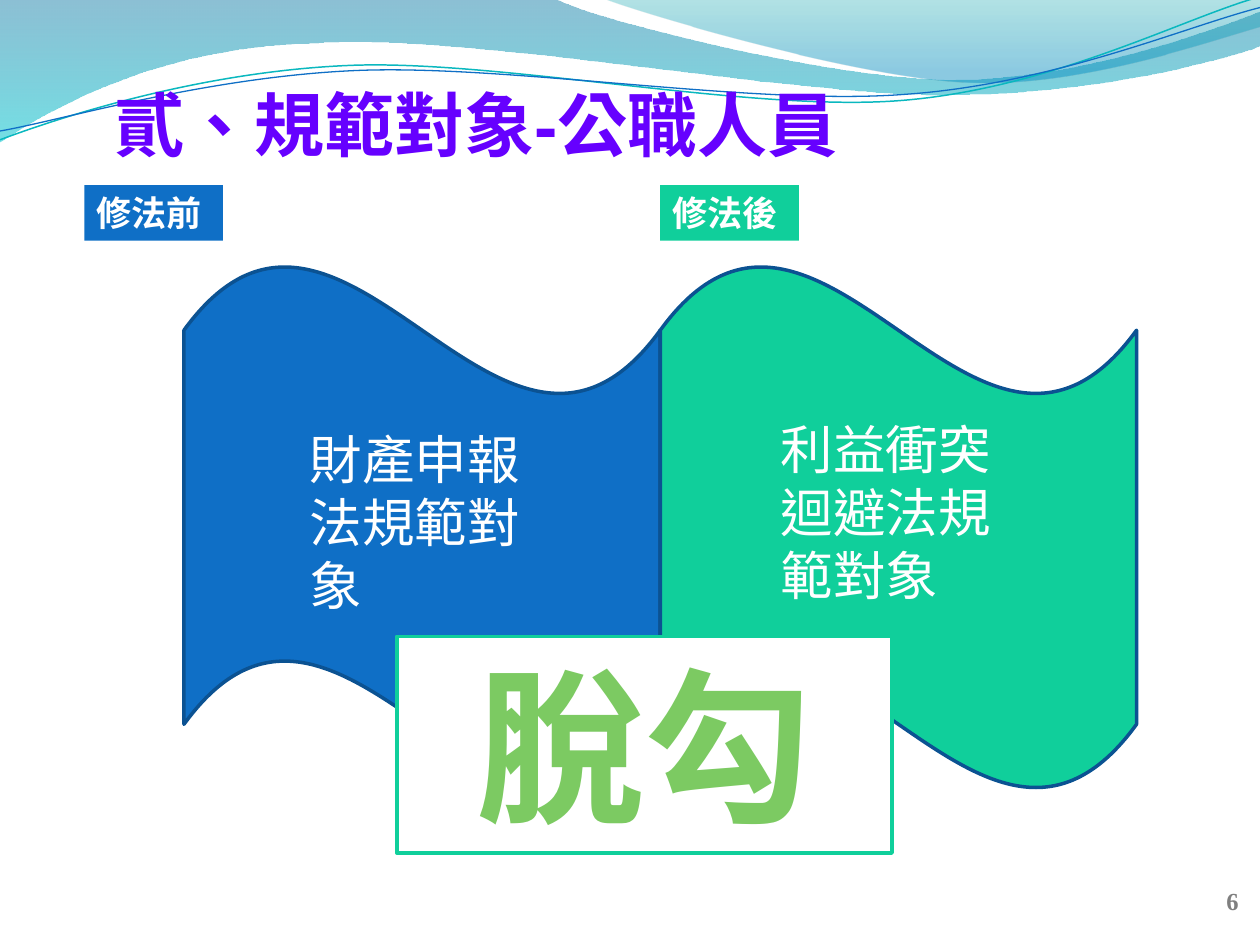
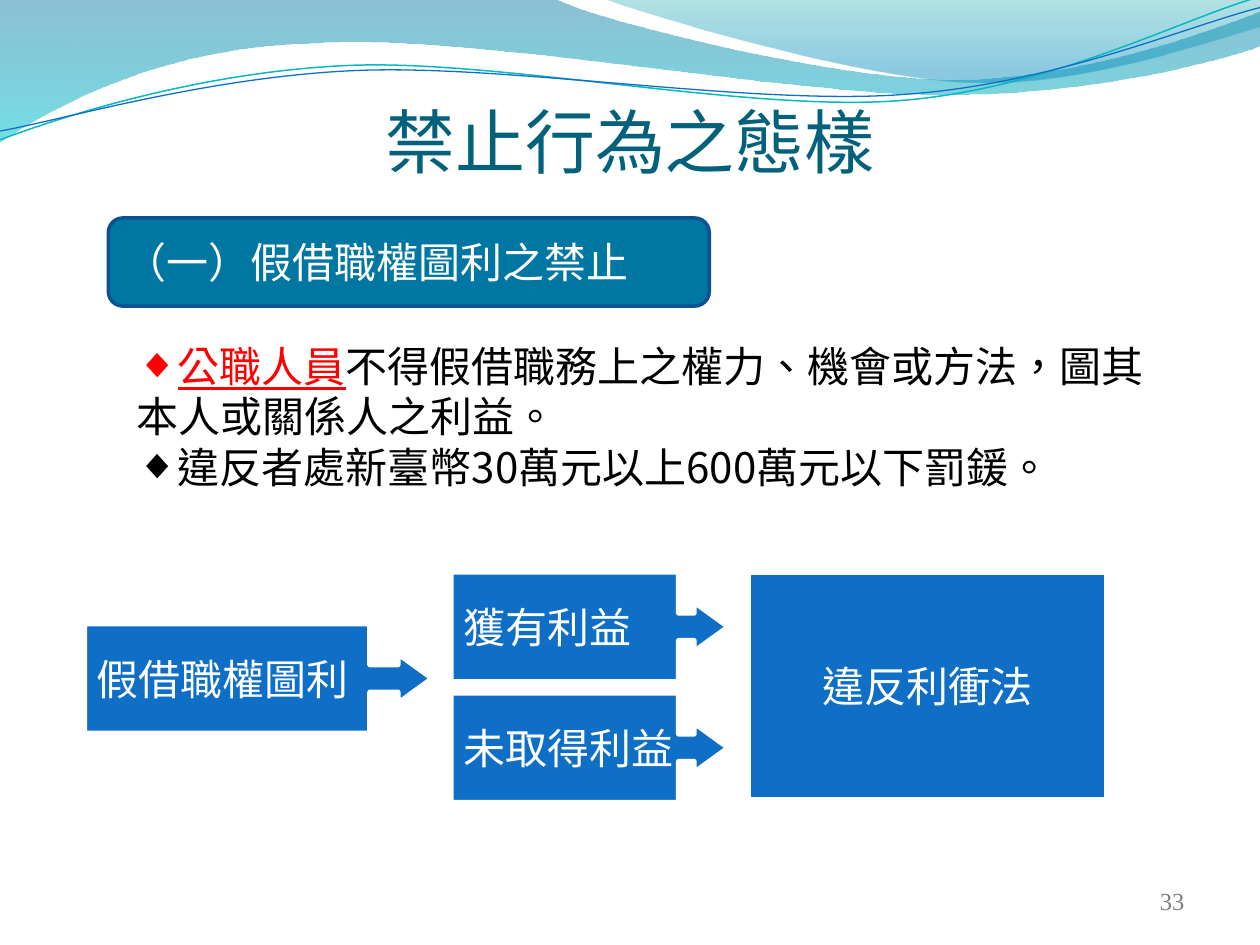
import pptx
import pptx.dml.color
import pptx.enum.shapes
import pptx.enum.text
import pptx.oxml
import pptx.oxml.ns
import pptx.util
from lxml import etree

Inches = pptx.util.Inches
Pt = pptx.util.Pt
SHAPE = pptx.enum.shapes.MSO_SHAPE
ALIGN = pptx.enum.text.PP_ALIGN
ANCHOR = pptx.enum.text.MSO_ANCHOR
qn = pptx.oxml.ns.qn

BLUE, GREEN, EDGE, WHITE, GREY = "0F6FC6", "10CF9B", "0B5292", "FFFFFF", "7F7F7F"
CJK = "Noto Sans CJK SC"

BANDS = [
    {"start": (0, 0), "close": True, "stops": [(0, "0074A1", 45), (1, "00C6CF", 55)],
     "steps": [(4.4, -0.01), (4.76, 0.17, 6.64, 0.63, 7.58, 0.63),
               (8.53, 0.63, 9.58, 0.26, 10, 0.09), (10.01, 0.36),
               (9.83, 0.44, 8.7, 0.76, 7.46, 0.75), (6.22, 0.75, 3.82, 0.28, 2.57, 0.34),
               (1.29, 0.36, 0.46, 0.83, -0.01, 1.13)]},
    {"start": (4.79, -0.01), "close": True, "stops": [(0, "00A1A9", 30), (0.8, "008BBF", 45)],
     "steps": [(5.09, 0.11, 6.82, 0.62, 7.69, 0.65), (8.56, 0.69, 9.61, 0.32, 10, 0.21),
               (10, 0)]},
    {"start": (0, 1.11), "close": False, "line": ("0AB8BF", 0.85),
     "steps": [(0.48, 0.93, 1.58, 0.57, 2.77, 0.52), (3.95, 0.47, 5.93, 0.89, 7.13, 0.8),
               (8.33, 0.71, 9.38, 0.15, 9.98, -0.02)]},
    {"start": (0, 1.04), "close": False, "line": (BLUE, 0.75),
     "steps": [(0.47, 0.96, 1.64, 0.61, 2.83, 0.56), (4.03, 0.51, 5.97, 0.84, 7.17, 0.75),
               (8.36, 0.67, 9.41, 0.21, 10, 0.06)]},
]

PERIODS = [
    {"label": "修法前", "law": "財產申報法規範對象", "color": BLUE,
     "label_left": 0.67, "wave_left": 1.46, "law_at": (2.36, 3.34, 2.24, 1.6)},
    {"label": "修法後", "law": "利益衝突迴避法規範對象", "color": GREEN,
     "label_left": 5.24, "wave_left": 5.24, "law_at": (6.1, 3.26, 2.13, 1.6)},
]

RULES = [
    [("公職人員", "FF0000", True),
     ("不得假借職務上之權力、機會或方法，圖其本人或關係人之利益。", "000000", False)],
    [("違反者處新臺幣30萬元以上600萬元以下罰鍰。", "000000", False)],
]

CALLOUTS = [
    ("假借職權圖利", (0.67, 4.95, 2.76, 0.87)),
    ("獲有利益", (3.58, 4.54, 2.2, 0.87)),
    ("未取得利益", (3.58, 5.5, 2.2, 0.87)),
]


def rgb(color):
    return pptx.dml.color.RGBColor.from_string(color)


def place(sp, at):
    sp.left, sp.top, sp.width, sp.height = map(Inches, at)


def set_line(sp, line):
    if line:
        sp.line.color.rgb = rgb(line[0])
        sp.line.width = Pt(line[1])
    else:
        sp.line.fill.background()


def style_run(r, size, font, color, bold=False, underline=False):
    r.font.size, r.font.name = Pt(size), font
    r.font.bold, r.font.underline = bold, underline
    r.font.color.rgb = rgb(color)
    rpr = r.font._element
    rpr.set("lang", "zh-TW")
    ea = etree.Element(qn("a:ea"), typeface=font)
    rpr.find(qn("a:latin")).addnext(ea)


def write(sp, text, size, font, color, bold=False, align=ALIGN.LEFT,
          anchor=ANCHOR.TOP, wrap=True):
    tf = sp.text_frame
    tf.text = text
    tf.word_wrap, tf.vertical_anchor = wrap, anchor
    tf.auto_size = pptx.enum.text.MSO_AUTO_SIZE.NONE
    p = tf.paragraphs[0]
    p.alignment = align
    style_run(p.runs[0], size, font, color, bold)
    return p.runs[0]


def add_box(s, kind, at, fill, line=None):
    sp = s.shapes.add_shape(kind, *map(Inches, at))
    sp.shadow.inherit = False
    sp.fill.solid()
    sp.fill.fore_color.rgb = rgb(fill)
    set_line(sp, line)
    return sp


def add_text(s, at, *args, **style):
    return write(s.shapes.add_textbox(*map(Inches, at)), *args, **style)


def add_title(s, text, at, color, **style):
    place(s.shapes.title, at)
    write(s.shapes.title, text, 40, "Arial", color, **style)


def add_page_number(s, number, left, bold):
    add_text(s, (left, 6.95, 2.33, 0.4), number, 14, "Times New Roman", GREY,
             bold=bold, align=ALIGN.RIGHT, anchor=ANCHOR.MIDDLE)


def add_curve(s, start, steps, close):
    points = [(Inches(x), Inches(y)) for step in steps for x, y in zip(step[::2], step[1::2])]
    builder = s.shapes.build_freeform(*map(Inches, start))
    builder.add_line_segments(points, close=close)
    sp = builder.convert_to_shape()
    segments = iter(list(sp.element.spPr.iter(qn("a:lnTo"))))
    for step in steps:
        segment = next(segments)
        if len(step) == 6:
            curve = etree.Element(qn("a:cubicBezTo"))
            segment.addprevious(curve)
            for part in (segment, next(segments), next(segments)):
                curve.append(part[0])
                part.getparent().remove(part)
    return sp


def add_master_bands(prs, s):
    tree = prs.slide_master.shapes.element
    for i, band in enumerate(BANDS):
        sp = add_curve(s, band["start"], band["steps"], band["close"])
        sp.shadow.inherit = False
        set_line(sp, band.get("line"))
        if "stops" in band:
            sp.fill.gradient()
            sp.fill.gradient_angle = 270
            for stop, (position, color, _) in zip(sp.fill.gradient_stops, band["stops"]):
                stop.position = position
                stop.color.rgb = rgb(color)
            for clr, (_, _, opacity) in zip(sp.element.spPr.iter(qn("a:srgbClr")), band["stops"]):
                etree.SubElement(clr, qn("a:alpha"), val=str(opacity * 1000))
        else:
            sp.fill.background()
        sp.element.nvSpPr.cNvPr.set("id", str(50 + i))
        tree.insert(2 + i, sp.element)


def add_rules(sp):
    place(sp, (0.98, 2.65, 8.27, 1.31))
    tf = sp.text_frame
    tf.word_wrap, tf.vertical_anchor = True, ANCHOR.TOP
    tf.auto_size = pptx.enum.text.MSO_AUTO_SIZE.NONE
    for i, rule in enumerate(RULES):
        p = tf.add_paragraph() if i else tf.paragraphs[0]
        p.alignment, p.space_before = ALIGN.LEFT, Pt(0)
        ppr = p._p.get_or_add_pPr()
        ppr.set("marL", "0")
        ppr.set("indent", "0")
        etree.SubElement(ppr, qn("a:buFont"), typeface="Arial")
        etree.SubElement(ppr, qn("a:buChar"), char="◆")
        for text, color, underline in rule:
            r = p.add_run()
            r.text = text
            style_run(r, 24, CJK, color, underline=underline)


def build_scope_slide(s):
    add_title(s, "貳、規範對象-公職人員", (0.81, 0.6, 7.17, 0.77), "6600FF", bold=True)
    for period in PERIODS:
        add_box(s, SHAPE.WAVE, (period["wave_left"], 2.1, 3.78, 4.17),
                period["color"], (EDGE, 2))
        add_text(s, period["law_at"], period["law"], 30, CJK, WHITE)
        label = add_box(s, SHAPE.RECTANGLE, (period["label_left"], 1.47, 1.1, 0.44),
                        period["color"])
        write(label, period["label"], 20, "Vollkorn", WHITE, bold=True)
    verdict = add_box(s, SHAPE.RECTANGLE, (3.15, 5.05, 3.93, 1.72), WHITE, (GREEN, 2))
    r = write(verdict, "脫勾", 96, "Vollkorn", "7CCA62", bold=True, align=ALIGN.CENTER)
    outline = etree.Element(qn("a:ln"), w=str(Pt(0.75)))
    fill = etree.SubElement(outline, qn("a:solidFill"))
    etree.SubElement(fill, qn("a:srgbClr"), val=WHITE)
    r.font._element.insert(0, outline)
    add_page_number(s, "6", 7.6, True)


def build_prohibition_slide(s):
    add_title(s, "禁止行為之態樣", (0.33, 0.25, 9.34, 1.25), "04617B",
              align=ALIGN.CENTER, anchor=ANCHOR.BOTTOM)
    heading = add_box(s, SHAPE.ROUNDED_RECTANGLE, (0.86, 1.73, 4.77, 0.7), "0076A3", (EDGE, 2))
    write(heading, "（一）假借職權圖利之禁止", 24, "Arial", WHITE, anchor=ANCHOR.MIDDLE)
    add_rules(s.placeholders[1])
    for text, at in CALLOUTS:
        callout = add_box(s, SHAPE.RIGHT_ARROW_CALLOUT, at, BLUE, (WHITE, 3))
        for i, value in enumerate((0.25, 0.225, 0.311, 0.821)):
            callout.adjustments[i] = value
        write(callout, text, 24, CJK, WHITE, anchor=ANCHOR.MIDDLE, wrap=False)
    result = add_box(s, SHAPE.RECTANGLE, (5.94, 4.54, 2.84, 1.81), BLUE, (WHITE, 3))
    write(result, "違反利衝法", 24, "Arial", WHITE, align=ALIGN.CENTER,
          anchor=ANCHOR.MIDDLE, wrap=False)
    add_page_number(s, "33", 7.17, False)


def main():
    prs = pptx.Presentation()
    prs.slide_width, prs.slide_height = Inches(10), Inches(7.5)
    scope = prs.slides.add_slide(prs.slide_layouts[5])
    add_master_bands(prs, scope)
    build_scope_slide(scope)
    build_prohibition_slide(prs.slides.add_slide(prs.slide_layouts[1]))
    prs.save("out.pptx")


if __name__ == "__main__":
    main()
